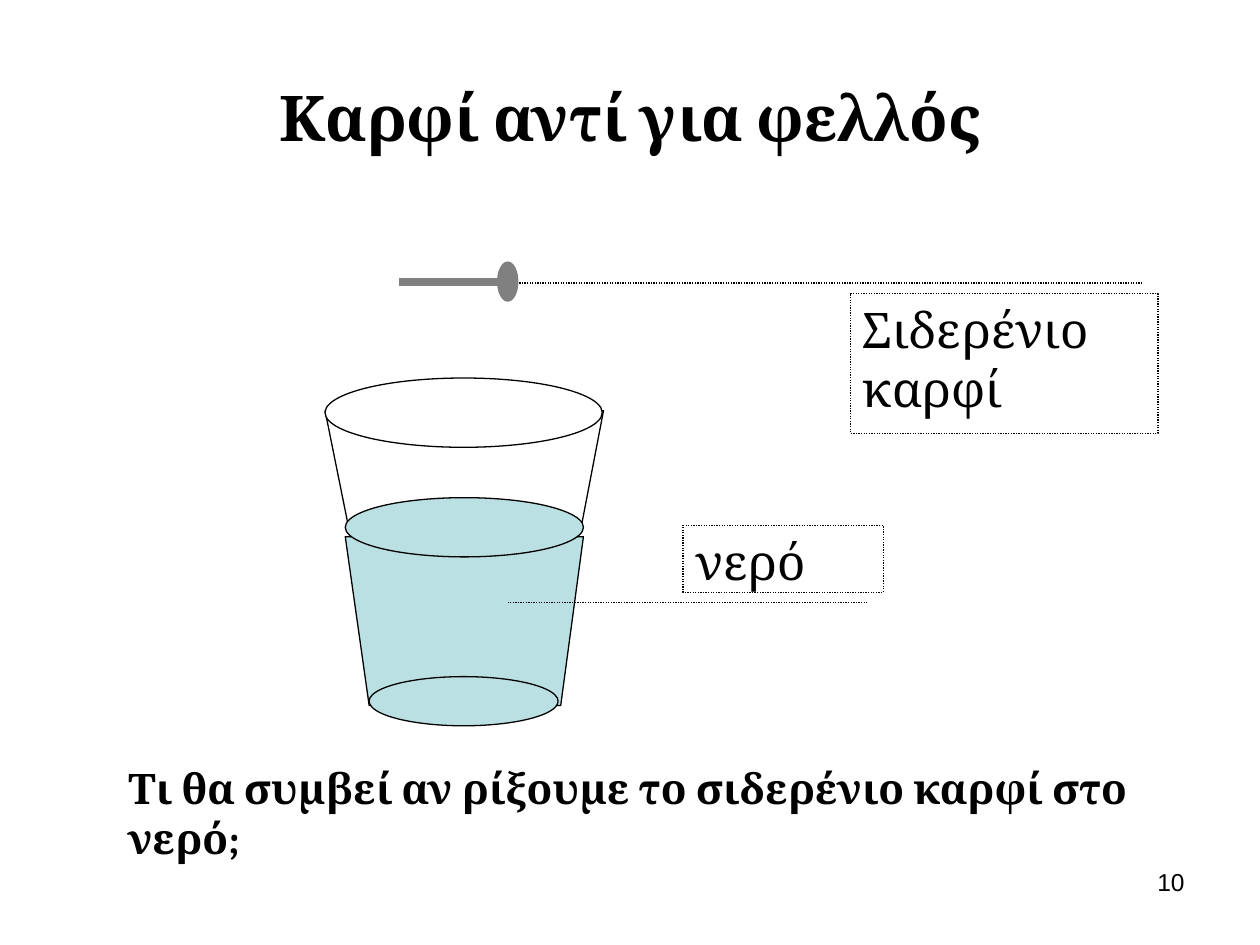
from pptx import Presentation
from pptx.dml.color import RGBColor
from pptx.enum.dml import MSO_LINE
from pptx.enum.shapes import MSO_CONNECTOR, MSO_SHAPE
from pptx.enum.text import MSO_ANCHOR as Anchor, PP_ALIGN as Align
from pptx.oxml.ns import qn
from pptx.util import Inches, Pt
from lxml.etree import SubElement

BLACK, WHITE, WATER, IRON = "000000", "FFFFFF", "BBE0E3", "808080"


def rgb(hex_color):
    """Turn a hex string into a colour."""
    return RGBColor.from_string(hex_color)


def paint(shape, fill, line=BLACK):
    """Give a shape its fill and a thin outline, without shadow."""
    shape.shadow.inherit = False
    if fill:
        shape.fill.solid()
        shape.fill.fore_color.rgb = rgb(fill)
    else:
        shape.fill.background()
    shape.line.color.rgb = rgb(line)
    shape.line.width = Pt(0.75)


def write(shape, text, size, font="Cambria", bold=False, align=Align.LEFT, anchor=Anchor.TOP):
    """Put one formatted paragraph into a shape."""
    frame = shape.text_frame
    frame.word_wrap = True
    frame.vertical_anchor = anchor
    frame.text = text
    paragraph = frame.paragraphs[0]
    paragraph.alignment = align
    style = paragraph.runs[0].font
    style.name, style.size, style.bold = font, Pt(size), bold
    style.color.rgb = rgb(BLACK)


def add_text(shapes, box, text, size, **style):
    """Add a text box."""
    write(shapes.add_textbox(*map(Inches, box)), text, size, **style)


def add_ellipse(shapes, box, fill, line=BLACK):
    """Add an outlined ellipse."""
    paint(shapes.add_shape(MSO_SHAPE.OVAL, *map(Inches, box)), fill, line)


def add_wall(shapes, corners, fill=None):
    """Add a tapering side of the glass."""
    start, *others = [(Inches(x), Inches(y)) for x, y in corners]
    builder = shapes.build_freeform(*start)
    builder.add_line_segments(others, close=True)
    paint(builder.convert_to_shape(), fill)


def add_callout(shapes, box, text, pointer):
    """Add a dotted label with a pointer line."""
    callout = shapes.add_shape(MSO_SHAPE.LINE_CALLOUT_1, *map(Inches, box))
    for index, value in enumerate(pointer):
        callout.adjustments[index] = value
    paint(callout, WHITE)
    callout.line.dash_style = MSO_LINE.ROUND_DOT
    write(callout, text, 28)


def add_glass(slide):
    """Draw the glass partly filled with water."""
    glass = slide.shapes.add_group_shape().shapes
    add_wall(glass, [(2.58, 3.26), (2.77, 4.2), (4.61, 4.2), (4.79, 3.26)])
    add_ellipse(glass, (2.58, 3, 2.2, 0.55), WHITE)
    add_wall(glass, [(2.74, 4.26), (2.93, 5.6), (4.45, 5.6), (4.63, 4.26)], WATER)
    add_ellipse(glass, (2.93, 5.37, 1.5, 0.39), WATER)
    add_ellipse(glass, (2.74, 3.95, 1.89, 0.47), WATER)


def add_nail(slide):
    """Draw the iron nail with its head."""
    nail = slide.shapes.add_group_shape().shapes
    ends = map(Inches, (3.17, 2.24, 4.03, 2.24))
    shank = nail.add_connector(MSO_CONNECTOR.STRAIGHT, *ends)
    shank.line.color.rgb = rgb(IRON)
    shank.line.width = Pt(4.5)
    SubElement(shank._element.spPr, qn("a:effectLst"))
    add_ellipse(nail, (3.95, 2.08, 0.16, 0.31), IRON, IRON)


def main():
    """Build the slide and save it."""
    deck = Presentation()
    deck.slide_width, deck.slide_height = Inches(10), Inches(7.5)
    slide = deck.slides.add_slide(deck.slide_layouts[6])
    shapes = slide.shapes
    add_glass(slide)
    add_callout(shapes, (5.42, 4.17, 1.59, 0.53), "νερό", (1.157, 0.921, 1.157, -0.871))
    add_callout(shapes, (6.75, 2.33, 2.44, 1.11), "Σιδερένιο καρφί",
                (-0.075, 0.949, -0.075, -1.355))
    add_text(shapes, (0.92, 6, 8.43, 0.91),
             "Τι θα συμβεί αν ρίξουμε το σιδερένιο καρφί στο νερό;", 24, bold=True)
    add_nail(slide)
    add_text(shapes, (0.5, 0.3, 9, 1.25), "Καρφί αντί για φελλός", 36,
             bold=True, align=Align.CENTER, anchor=Anchor.MIDDLE)
    add_text(shapes, (7.17, 6.83, 2.33, 0.52), "10", 14, font="Arial", align=Align.RIGHT)
    deck.save("out.pptx")


if __name__ == "__main__":
    main()
